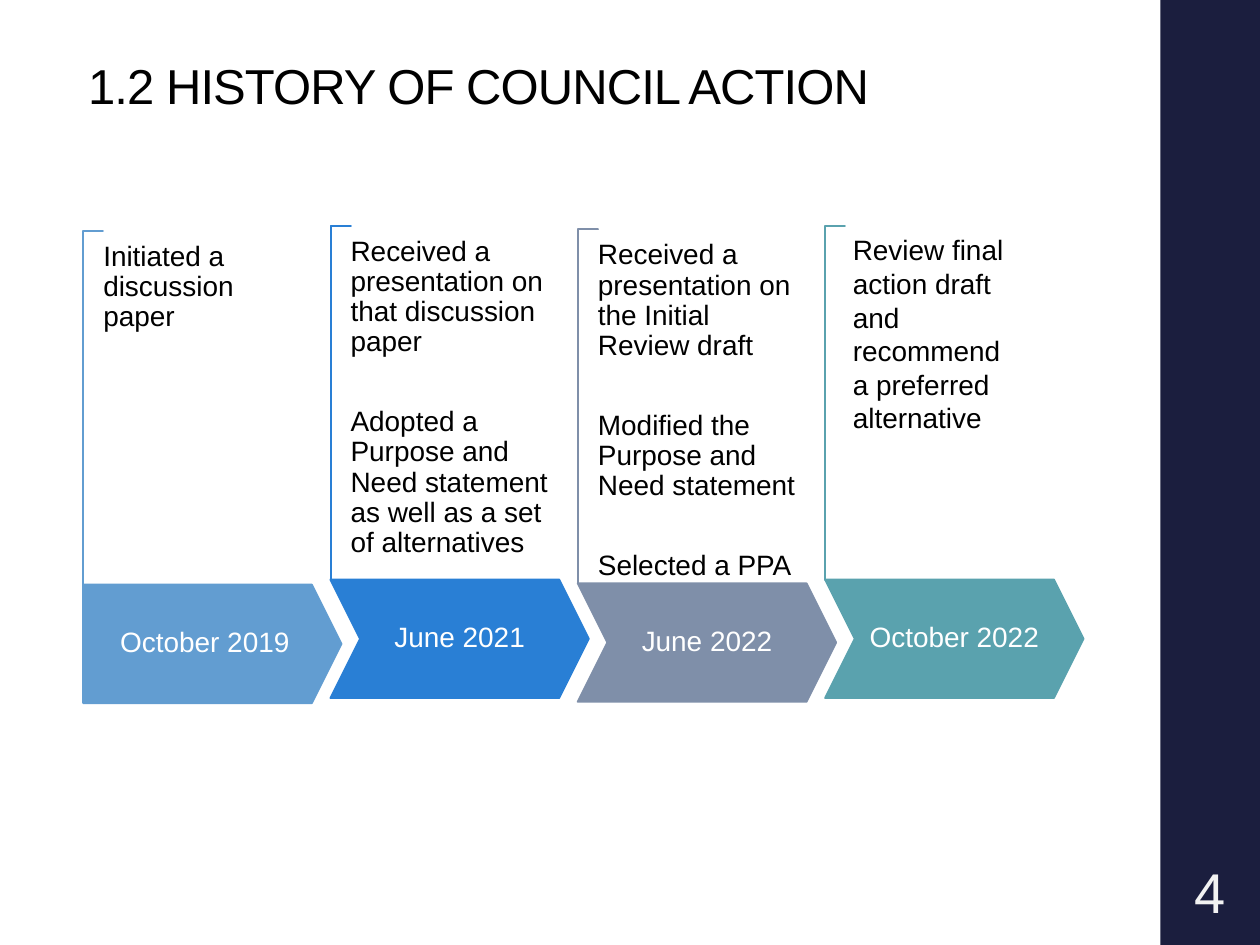
from pptx import Presentation
from pptx.dml.color import RGBColor
from pptx.enum.shapes import MSO_SHAPE as Shape
from pptx.enum.text import MSO_ANCHOR as Anchor, PP_ALIGN as Align
from pptx.util import Inches, Pt

FONT = "Arial"
BLACK = RGBColor(0x00, 0x00, 0x00)
WHITE = RGBColor(0xFF, 0xFF, 0xFF)
PALE_GRAY = RGBColor(0xF2, 0xF2, 0xF2)
NAVY = RGBColor(0x1B, 0x1E, 0x3E)
SKY = RGBColor(0x62, 0x9D, 0xD1)
BLUE = RGBColor(0x29, 0x7F, 0xD5)
SLATE = RGBColor(0x7F, 0x8F, 0xA9)
TEAL = RGBColor(0x5A, 0xA2, 0xAE)

# Timeline geometry, in inches
FIRST_LEFT, STEP = 0.66, 1.963
ARROW_WIDTH, ARROW_HEIGHT = 2.05, 0.94
BRACKET_HEIGHT, BRACKET_WIDTH = 2.81, 0.16

# Date, arrow top, colour, actions
MILESTONES = [
    ("October 2019", 4.64, SKY, ["Initiated a discussion paper"]),
    ("June 2021", 4.6, BLUE, [
        "Received a presentation on that discussion paper",
        "Adopted a Purpose and Need statement as well as a set of alternatives"]),
    ("June 2022", 4.63, SLATE, [
        "Received a presentation on the Initial Review draft",
        "Modified the Purpose and Need statement",
        "Selected a PPA"]),
    ("October 2022", 4.6, TEAL, []),
]


def write_text(holder, paragraphs, size=16, color=BLACK, align=Align.LEFT,
               anchor=Anchor.TOP, insets=(0.1, 0.05), line_spacing=None,
               gap=0, tracking=None):
    frame = holder.text_frame
    frame.word_wrap = True
    frame.vertical_anchor = anchor
    frame.margin_left = frame.margin_right = Inches(insets[0])
    frame.margin_top = frame.margin_bottom = Inches(insets[1])
    for index, text in enumerate(paragraphs):
        paragraph = frame.add_paragraph() if index else frame.paragraphs[0]
        paragraph.alignment = align
        paragraph.line_spacing = line_spacing
        if index:
            paragraph.space_before = Pt(gap)
        run = paragraph.add_run()
        run.text = text
        run.font.name = FONT
        run.font.size = Pt(size)
        run.font.color.rgb = color
        if tracking is not None:
            run.font._element.set("spc", str(int(tracking * 100)))


def add_text(slide, left, top, width, height, paragraphs, **text_format):
    box = slide.shapes.add_textbox(Inches(left), Inches(top),
                                   Inches(width), Inches(height))
    write_text(box, paragraphs, **text_format)


def add_block(slide, kind, left, top, width, height, fill, line=None):
    block = slide.shapes.add_shape(kind, Inches(left), Inches(top),
                                   Inches(width), Inches(height))
    block.shadow.inherit = False
    block.fill.solid()
    block.fill.fore_color.rgb = fill
    if line is None:
        block.line.fill.background()
    else:
        block.line.color.rgb = line
        block.line.width = Pt(1.1)
    return block


def add_bracket(slide, left, bottom, color):
    # A thin corner shape turned a quarter, so its long side stands upright
    center_x = left + BRACKET_WIDTH / 2
    center_y = bottom - BRACKET_HEIGHT / 2
    bracket = add_block(slide, Shape.CORNER, center_x - BRACKET_HEIGHT / 2,
                        center_y - BRACKET_WIDTH / 2,
                        BRACKET_HEIGHT, BRACKET_WIDTH, WHITE, color)
    bracket.rotation = 90
    bracket.adjustments[0] = bracket.adjustments[1] = 0.01


def add_milestone(slide, index, date, top, color, actions):
    left = FIRST_LEFT + index * STEP
    add_bracket(slide, left, top, color)
    arrow = add_block(slide, Shape.CHEVRON if index else Shape.PENTAGON,
                      left, top, ARROW_WIDTH, ARROW_HEIGHT, color, color)
    arrow.adjustments[0] = 0.25
    write_text(arrow, [date], color=WHITE, align=Align.CENTER,
               anchor=Anchor.MIDDLE, insets=(0.1, 0.22), line_spacing=0.9)
    if actions:
        add_text(slide, left + BRACKET_WIDTH, top - 2.72, 1.66, 2.62, actions,
                 insets=(0, 0), line_spacing=0.9, gap=28.5)


def main():
    prs = Presentation()
    prs.slide_width, prs.slide_height = Inches(10), Inches(7.5)
    slide = prs.slides.add_slide(prs.slide_layouts[6])

    # Side band with page number
    add_block(slide, Shape.RECTANGLE, 9.21, 0, 0.8, 7.5, NAVY)
    add_text(slide, 9.23, 6.75, 0.75, 0.65, ["4"], size=32, color=PALE_GRAY,
             align=Align.CENTER, anchor=Anchor.MIDDLE, insets=(0.03, 0.05))

    # Title
    add_text(slide, 0.6, 0.28, 7.95, 0.68, ["1.2 HISTORY OF COUNCIL ACTION"],
             size=28, anchor=Anchor.BOTTOM, line_spacing=0.9, tracking=-0.5)

    # Timeline
    for index, milestone in enumerate(MILESTONES):
        add_milestone(slide, index, *milestone)

    # Final action, set apart from the other columns
    add_text(slide, 6.67, 1.8, 1.49, 1.95,
             ["Review final action draft and recommend a preferred alternative"])

    prs.save("out.pptx")


if __name__ == "__main__":
    main()
